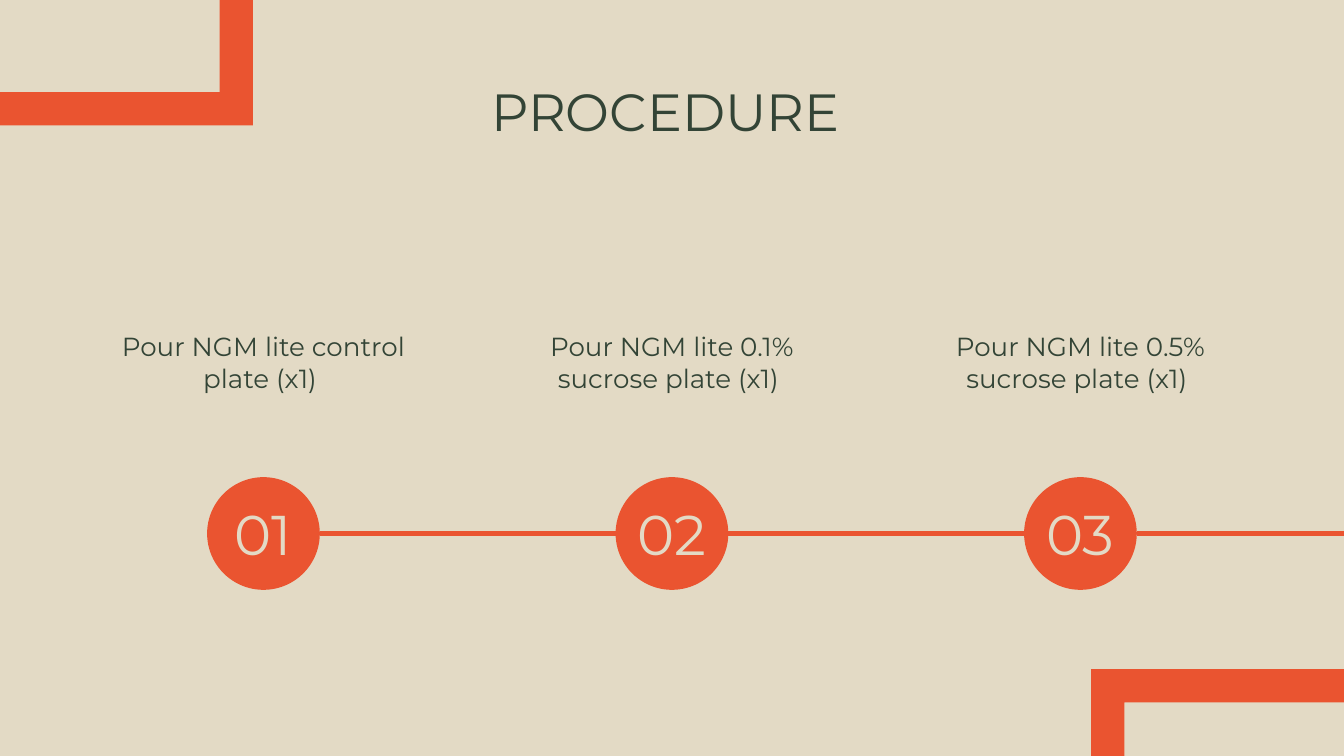
from dataclasses import dataclass

from lxml import etree
from pptx import Presentation
from pptx.dml.color import RGBColor
from pptx.enum.shapes import MSO_CONNECTOR, MSO_SHAPE
from pptx.enum.text import MSO_ANCHOR, PP_ALIGN
from pptx.oxml.ns import qn
from pptx.util import Cm, Pt


@dataclass(frozen=True)
class Theme:
    font: str = "Montserrat"
    sand: RGBColor = RGBColor(0xE3, 0xDA, 0xC5)
    orange: RGBColor = RGBColor(0xEA, 0x54, 0x30)
    green: RGBColor = RGBColor(0x33, 0x44, 0x36)
    title_size: Pt = Pt(28)
    label_size: Pt = Pt(14)
    number_size: Pt = Pt(30)
    line_width: Pt = Pt(3)


THEME = Theme()
SLIDE_W, SLIDE_H = 25.4, 14.29

# Trailing spaces count towards the centring of a line
STEPS = [
    "Pour NGM lite control plate (x1) ",
    "Pour NGM lite 0.1% sucrose plate (x1) ",
    "Pour NGM lite 0.5% sucrose plate (x1) ",
]


def write(sp, text, size, color, anchor, margins):
    """Fill a shape with one centred paragraph; margins are l, t, r, b."""
    tf = sp.text_frame
    tf.word_wrap = True
    tf.vertical_anchor = anchor
    tf.margin_left, tf.margin_top, tf.margin_right, tf.margin_bottom = map(Cm, margins)
    p = tf.paragraphs[0]
    p.text = text
    p.alignment = PP_ALIGN.CENTER
    p.font.name = THEME.font
    p.font.size = size
    p.font.color.rgb = color


def add_solid(s, kind, x, y, w, h):
    sp = s.shapes.add_shape(kind, Cm(x), Cm(y), Cm(w), Cm(h))
    sp.shadow.inherit = False
    sp.fill.solid()
    sp.fill.fore_color.rgb = THEME.orange
    sp.line.fill.background()
    return sp


def add_text(s, x, y, w, h, text, size, margins):
    sp = s.shapes.add_textbox(Cm(x), Cm(y), Cm(w), Cm(h))
    write(sp, text, size, THEME.green, MSO_ANCHOR.TOP, margins)


def add_line(s, x1, x2, y):
    line = s.shapes.add_connector(MSO_CONNECTOR.STRAIGHT, Cm(x1), Cm(y), Cm(x2), Cm(y))
    line.line.color.rgb = THEME.orange
    line.line.width = THEME.line_width
    etree.SubElement(line._element.spPr, qn("a:effectLst"))


def add_corner_frame(s, x, y, w, h):
    """A frame that runs off the slide, leaving one corner in view."""
    thickness = 0.63
    sp = add_solid(s, MSO_SHAPE.FRAME, x, y, w, h)
    sp.adjustments[0] = thickness / min(w, h)


def add_title(s, x, y, w, h):
    add_text(s, x, y, w, h, "PROCEDURE ", THEME.title_size, [0.25] * 4)


def add_timeline(s, x, y, w, h):
    """Labels along the top, numbered circles along the bottom."""
    label_w, label_h, diameter = 5.92, 2.74, 2.13
    pitch = (w - label_w) / (len(STEPS) - 1)
    centers = [x + label_w / 2 + i * pitch for i in range(len(STEPS))]
    circle_y = y + h - diameter
    radius = diameter / 2

    # Steps
    for i, (cx, step) in enumerate(zip(centers, STEPS), 1):
        add_text(s, cx - label_w / 2, y, label_w, label_h, step,
                 THEME.label_size, (0.25, 0.25, 0.25, 0))
        sp = add_solid(s, MSO_SHAPE.OVAL, cx - radius, circle_y, diameter, diameter)
        write(sp, f"{i:02}", THEME.number_size, THEME.sand,
              MSO_ANCHOR.MIDDLE, (0, 0.25, 0, 0.25))

    # Links, the last one running past the slide edge
    ends = [cx - radius for cx in centers[1:]] + [SLIDE_W + 0.43]
    for cx, end in zip(centers, ends):
        add_line(s, cx + radius, end, circle_y + radius)


def main():
    prs = Presentation()
    prs.slide_width, prs.slide_height = Cm(SLIDE_W), Cm(SLIDE_H)
    s = prs.slides.add_slide(prs.slide_layouts[6])
    s.background.fill.solid()
    s.background.fill.fore_color.rgb = THEME.sand

    # Corner decoration
    add_corner_frame(s, 20.62, 12.65, 10.36, 11.13)
    add_corner_frame(s, -5.58, -8.76, 10.36, 11.13)

    # Content
    add_title(s, 2, 1.25, 21.4, 1.6)
    add_timeline(s, 2.02, 6, 21.36, 5.15)

    prs.save("out.pptx")


if __name__ == "__main__":
    main()
